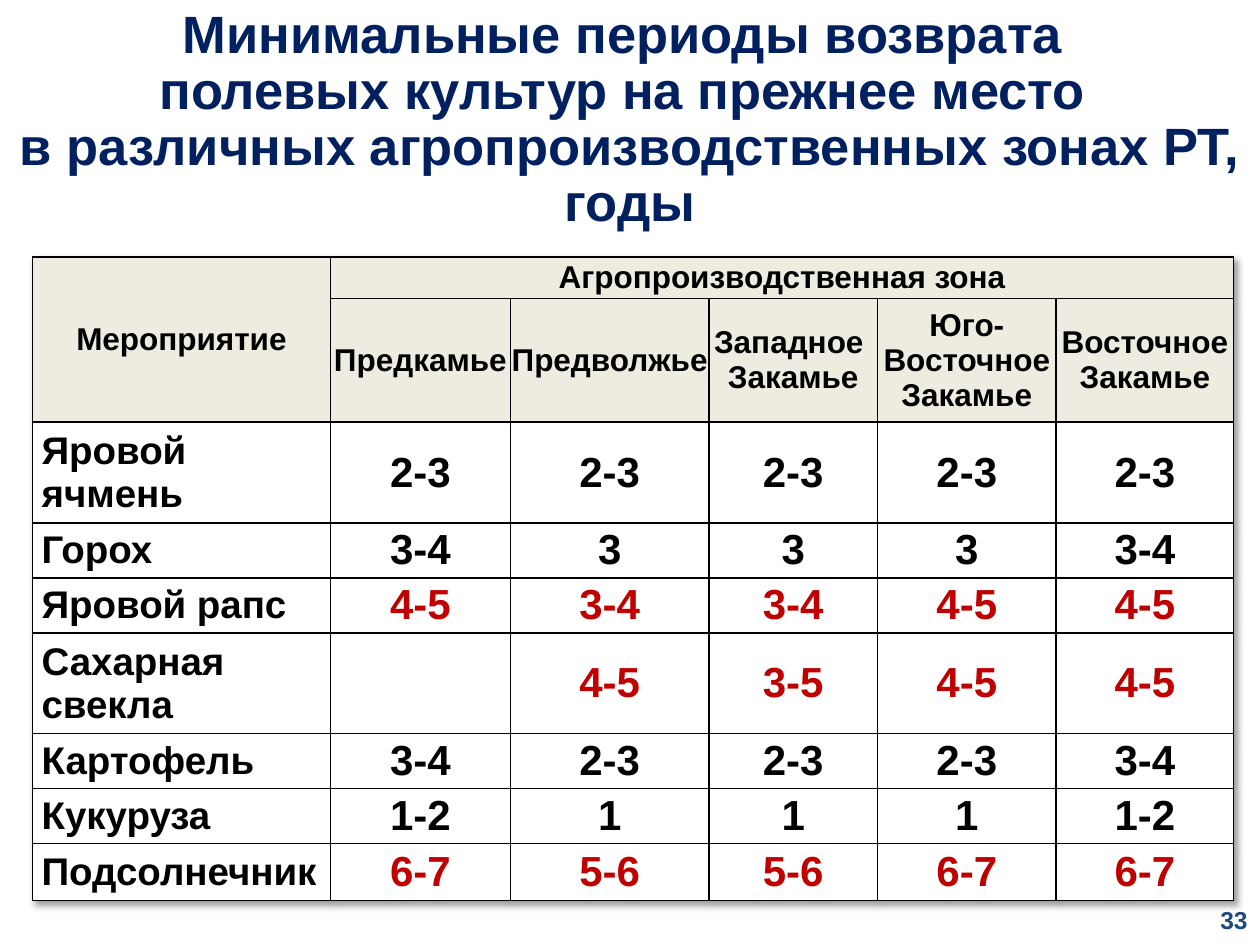
from lxml import etree
from pptx import Presentation
from pptx.dml.color import RGBColor
from pptx.enum.text import MSO_ANCHOR, MSO_AUTO_SIZE, PP_ALIGN
from pptx.oxml import parse_xml
from pptx.oxml.ns import nsdecls, qn
from pptx.util import Cm, Pt

CENTER, JUSTIFY, RIGHT = PP_ALIGN.CENTER, PP_ALIGN.JUSTIFY, PP_ALIGN.RIGHT
TOP, MIDDLE = MSO_ANCHOR.TOP, MSO_ANCHOR.MIDDLE
NO_AUTOFIT = MSO_AUTO_SIZE.NONE
TITLE_ONLY = 5

FONT = "Arial"
BLACK, WHITE, RED = "000000", "FFFFFF", "C00000"
NAVY, BLUE, BEIGE = "002060", "1F497D", "EEECE1"

TITLE = ("Минимальные периоды возврата \v"
         "полевых культур на прежнее место \v"
         "в различных агропроизводственных зонах РТ, годы")
ZONES = ["Предкамье", "Предволжье", "Западное \nЗакамье",
         "Юго-Восточное Закамье", "Восточное Закамье"]
# Crop, return periods by zone, colour of the periods
CROPS = [
    ("Яровой ячмень", ["2-3", "2-3", "2-3", "2-3", "2-3"], BLACK),
    ("Горох", ["3-4", "3", "3", "3", "3-4"], BLACK),
    ("Яровой рапс", ["4-5", "3-4", "3-4", "4-5", "4-5"], RED),
    ("Сахарная свекла", ["", "4-5", "3-5", "4-5", "4-5"], RED),
    ("Картофель", ["3-4", "2-3", "2-3", "2-3", "3-4"], BLACK),
    ("Кукуруза", ["1-2", "1", "1", "1", "1-2"], BLACK),
    ("Подсолнечник", ["6-7", "5-6", "5-6", "6-7", "6-7"], RED),
]
COLUMN_WIDTHS = [6, 3.63, 4, 3.4, 3.6, 3.58]
ROW_HEIGHTS = [0.84, 2.49, 2.03, 1.11, 1.11, 2.03, 1.11, 1.11, 1.15]


def rgb(hex_colour):
    return RGBColor.from_string(hex_colour)


def write(frame, text, size, colour, align):
    frame.text = text
    for paragraph in frame.paragraphs:
        paragraph.alignment = align
        font = paragraph.font
        font.name, font.size, font.bold = FONT, Pt(size), True
        font.color.rgb = rgb(colour)


def add_borders(cell):
    properties = cell._tc.get_or_add_tcPr()
    for position, side in enumerate(("lnL", "lnR", "lnT", "lnB")):
        properties.insert(position, parse_xml(
            f'<a:{side} {nsdecls("a")} w="12700"><a:solidFill>'
            f'<a:srgbClr val="{BLACK}"/></a:solidFill></a:{side}>'))


def fill_cell(cell, text, size, colour=BLACK, fill=WHITE, align=CENTER, side=0.18):
    cell.margin_left = cell.margin_right = Cm(side)
    cell.margin_top = cell.margin_bottom = 0
    cell.vertical_anchor = MIDDLE
    cell.fill.solid()
    cell.fill.fore_color.rgb = rgb(fill)
    write(cell.text_frame, text, size, colour, align)


def add_table_shadow(table):
    properties = table._tbl.tblPr
    effects = etree.Element(qn("a:effectLst"))
    effects.append(parse_xml(
        f'<a:outerShdw {nsdecls("a")} blurRad="50800" dist="38100" dir="2700000" '
        f'algn="tl" rotWithShape="0"><a:srgbClr val="{BLACK}">'
        '<a:alpha val="40000"/></a:srgbClr></a:outerShdw>'))
    properties.insert(0, effects)


def place_title(slide, left, top, width, height):
    title = slide.shapes.title
    title.left, title.top = Cm(left), Cm(top)
    title.width, title.height = Cm(width), Cm(height)
    frame = title.text_frame
    frame.auto_size = NO_AUTOFIT
    frame.vertical_anchor = TOP
    write(frame, TITLE, 30, NAVY, CENTER)
    frame.paragraphs[0].line_spacing = Pt(32)


def place_periods_table(slide, left, top):
    table = slide.shapes.add_table(
        len(ROW_HEIGHTS), len(COLUMN_WIDTHS), Cm(left), Cm(top),
        Cm(sum(COLUMN_WIDTHS)), Cm(sum(ROW_HEIGHTS))).table
    table.horz_banding = False
    for column, width in zip(table.columns, COLUMN_WIDTHS):
        column.width = Cm(width)
    for row, height in zip(table.rows, ROW_HEIGHTS):
        row.height = Cm(height)

    # Header: two rows, with the zones under a shared heading
    table.cell(0, 0).merge(table.cell(1, 0))
    table.cell(0, 1).merge(table.cell(0, len(ZONES)))
    fill_cell(table.cell(0, 0), "Мероприятие", 18, fill=BEIGE)
    fill_cell(table.cell(0, 1), "Агропроизводственная зона", 18, fill=BEIGE)
    for column, zone in enumerate(ZONES, 1):
        fill_cell(table.cell(1, column), zone, 18, fill=BEIGE, side=0)

    # Crops and their return periods
    for row, (crop, periods, colour) in enumerate(CROPS, 2):
        fill_cell(table.cell(row, 0), crop, 22, align=JUSTIFY)
        for column, period in enumerate(periods, 1):
            fill_cell(table.cell(row, column), period, 24, colour)

    for cell in table.iter_cells():
        add_borders(cell)
    add_table_shadow(table)


def place_page_number(slide, left, top, width, height):
    box = slide.shapes.add_textbox(Cm(left), Cm(top), Cm(width), Cm(height))
    frame = box.text_frame
    frame.word_wrap = True
    frame.vertical_anchor = MIDDLE
    write(frame, "33", 14, BLUE, RIGHT)


def main():
    presentation = Presentation()
    presentation.slide_width, presentation.slide_height = Cm(25.4), Cm(19.05)
    slide = presentation.slides.add_slide(presentation.slide_layouts[TITLE_ONLY])
    place_title(slide, 0, 0.03, 25.4, 4.83)
    place_periods_table(slide, 0.66, 5.18)
    place_page_number(slide, 19.48, 18.03, 5.92, 1.02)
    presentation.save("out.pptx")


if __name__ == "__main__":
    main()
